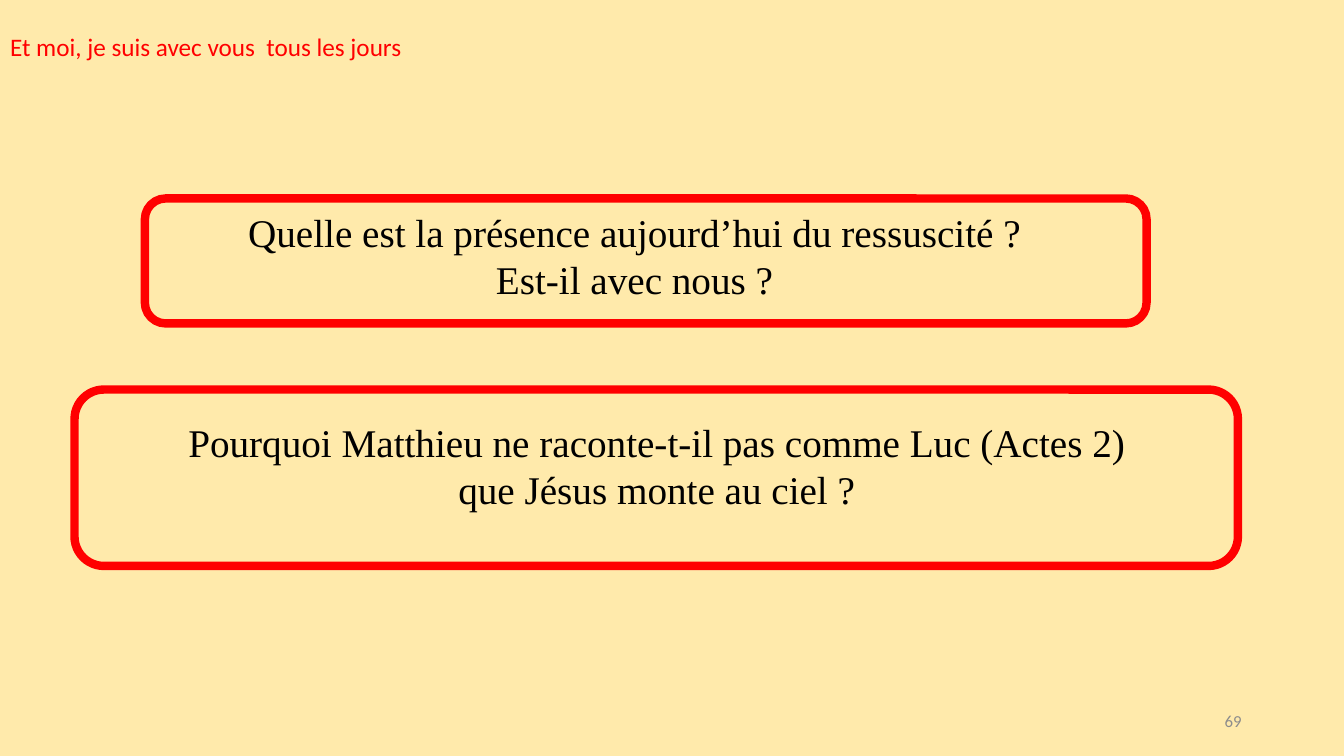
from pptx import Presentation
from pptx.dml.color import RGBColor
from pptx.enum.shapes import MSO_SHAPE
from pptx.enum.text import MSO_ANCHOR, MSO_AUTO_SIZE, PP_ALIGN
from pptx.util import Pt

PX = 9525
CREAM = RGBColor(0xFF, 0xEA, 0xAB)
RED = RGBColor(0xFF, 0x00, 0x00)
BLACK = RGBColor(0x00, 0x00, 0x00)
GREY = RGBColor(0x8C, 0x8C, 0x8C)


def scaled(*lengths):
    return [length * PX for length in lengths]


def write(box, lines, align, anchor, size, font_name, color):
    frame = box.text_frame
    frame.word_wrap = True
    frame.auto_size = MSO_AUTO_SIZE.NONE
    frame.vertical_anchor = anchor
    frame.text = "\n".join(lines)
    for paragraph in frame.paragraphs:
        paragraph.alignment = align
        font = paragraph.font
        for key, value in {"size": Pt(size), "name": font_name, "bold": False}.items():
            setattr(font, key, value)
        font.color.rgb = color


prs = Presentation()
prs.slide_width, prs.slide_height = scaled(1280, 720)
slide = prs.slides.add_slide(prs.slide_layouts[5])
slide.background.fill.solid()
slide.background.fill.fore_color.rgb = CREAM

title = slide.shapes.title
title.left, title.top, title.width, title.height = scaled(0, 25, 411, 38)
write(title, ["Et moi, je suis avec vous  tous les jours"],
      PP_ALIGN.LEFT, MSO_ANCHOR.TOP, 18, "Calibri", RED)

# Frame area, text area, lines of the question
questions = [
    ((138, 189, 954, 119), (138, 194, 942, 100),
     ["Quelle est la présence aujourd’hui du ressuscité ? ",
      "Est-il avec nous ? "]),
    ((71, 371, 1108, 168), (92, 394, 1067, 100),
     ["Pourquoi Matthieu ne raconte-t-il pas comme Luc (Actes 2)",
      " que Jésus monte au ciel ? "]),
]
for frame_area, text_area, lines in questions:
    group = slide.shapes.add_group_shape()
    border = group.shapes.add_shape(MSO_SHAPE.ROUNDED_RECTANGLE, *scaled(*frame_area))
    border.shadow.inherit = False
    border.fill.background()
    border.line.color.rgb = RED
    border.line.width = Pt(6)
    question = group.shapes.add_textbox(*scaled(*text_area))
    write(question, lines, PP_ALIGN.CENTER, MSO_ANCHOR.TOP, 28, "Times New Roman", BLACK)

page_number = slide.shapes.add_textbox(*scaled(904, 667, 288, 38))
write(page_number, ["69"], PP_ALIGN.RIGHT, MSO_ANCHOR.MIDDLE, 12, "Calibri", GREY)

prs.save("out.pptx")
